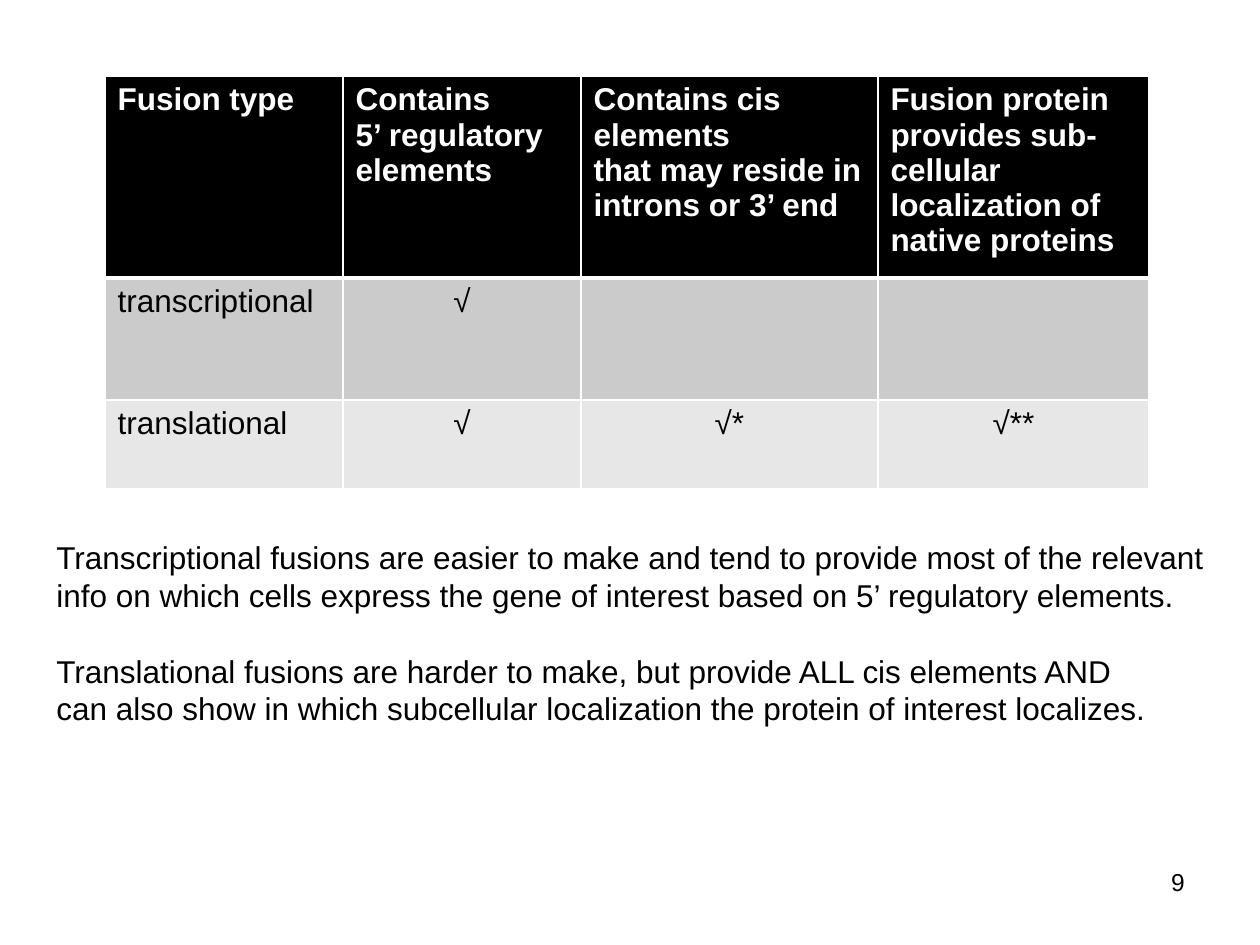
import pptx
import pptx.util
import pptx.dml.color
import pptx.enum.text
import pptx.oxml.ns
import lxml.etree
from dataclasses import dataclass

HEAD = [
    ["Fusion type"],
    ["Contains", "5’ regulatory elements"],
    ["Contains cis elements", "that may reside in introns or 3’ end"],
    ["Fusion protein provides sub-cellular localization of native proteins"],
]
BODY = [
    ["transcriptional", "√", "", ""],
    ["translational", "√", "√*", "√**"],
]
NOTES = [
    ["Transcriptional fusions are easier to make and tend to provide most of the relevant",
     "info on which cells express the gene of interest based on 5’ regulatory elements."],
    ["Translational fusions are harder to make, but provide ALL cis elements AND",
     "can also show in which subcellular localization the protein of interest localizes."],
]
PAGE = "9"

# Lengths in px, 126 to the inch
SIZE = (1260, 945)
GRID = (105, 76)
COLS = [238, 238, 297, 271]
ROWS = [202, 122, 89]
NOTE_BOX = (44, 532, 1192, 204)
PAGE_BOX = (903, 861, 294, 66)


@dataclass
class Theme:
    font: str = "Arial"
    ink: str = "000000"
    paper: str = "FFFFFF"
    fills: tuple = ("000000", "CBCBCB", "E7E7E7")
    text: int = 18
    small: int = 14
    cell_lead: float = 20.15
    note_lead: float = 21.6
    thin: int = 1
    thick: int = 3


THEME = Theme()
ALIGN = pptx.enum.text.PP_ALIGN


def px(n):
    return pptx.util.Emu(n * 914400 // 126)


def rgb(code):
    return pptx.dml.color.RGBColor.from_string(code)


def write(frame, groups, size=THEME.text, color=THEME.ink, bold=False,
          align=ALIGN.LEFT, lead=None):
    """Write groups of lines, with one line of space between groups."""
    frame.word_wrap = True
    first = True
    for group in groups:
        for i, line in enumerate(group):
            para = frame.paragraphs[0] if first else frame.add_paragraph()
            para.alignment = align
            if lead:
                para.line_spacing = pptx.util.Pt(lead)
                if i == 0 and not first:
                    para.space_before = pptx.util.Pt(lead)
            run = para.add_run()
            run.text = line
            run.font.name = THEME.font
            run.font.size = pptx.util.Pt(size)
            run.font.bold = bold
            run.font.color.rgb = rgb(color)
            first = False


def edge(cell, top, bottom):
    props = cell._tc.get_or_add_tcPr()
    qn = pptx.oxml.ns.qn
    for side, width in zip("LRTB", (THEME.thin, THEME.thin, top, bottom)):
        line = lxml.etree.SubElement(props, qn("a:ln" + side),
                                     w=str(pptx.util.Pt(width)))
        fill = lxml.etree.SubElement(line, qn("a:solidFill"))
        lxml.etree.SubElement(fill, qn("a:srgbClr"), val=THEME.paper)


def add_grid(slide):
    rows = [HEAD] + [[[text] if text else [] for text in row] for row in BODY]
    table = slide.shapes.add_table(
        len(ROWS), len(COLS), *map(px, GRID + (sum(COLS), sum(ROWS)))).table
    for col, width in zip(table.columns, COLS):
        col.width = px(width)
    for r, (row, high) in enumerate(zip(rows, ROWS)):
        table.rows[r].height = px(high)
        for c, lines in enumerate(row):
            cell = table.cell(r, c)
            edge(cell, THEME.thick if r == 1 else THEME.thin,
                 THEME.thick if r == 0 else THEME.thin)
            cell.fill.solid()
            cell.fill.fore_color.rgb = rgb(THEME.fills[r])
            write(cell.text_frame, [lines], bold=r == 0,
                  color=THEME.ink if r else THEME.paper,
                  align=ALIGN.CENTER if r and c else ALIGN.LEFT,
                  lead=THEME.cell_lead)


def add_text(slide, box, groups, **form):
    shape = slide.shapes.add_textbox(*map(px, box))
    write(shape.text_frame, groups, **form)


def main():
    deck = pptx.Presentation()
    deck.slide_width, deck.slide_height = map(px, SIZE)
    slide = deck.slides.add_slide(deck.slide_layouts[6])
    add_grid(slide)
    add_text(slide, NOTE_BOX, NOTES, lead=THEME.note_lead)
    add_text(slide, PAGE_BOX, [[PAGE]], size=THEME.small, align=ALIGN.RIGHT)
    deck.save("out.pptx")


if __name__ == "__main__":
    main()
